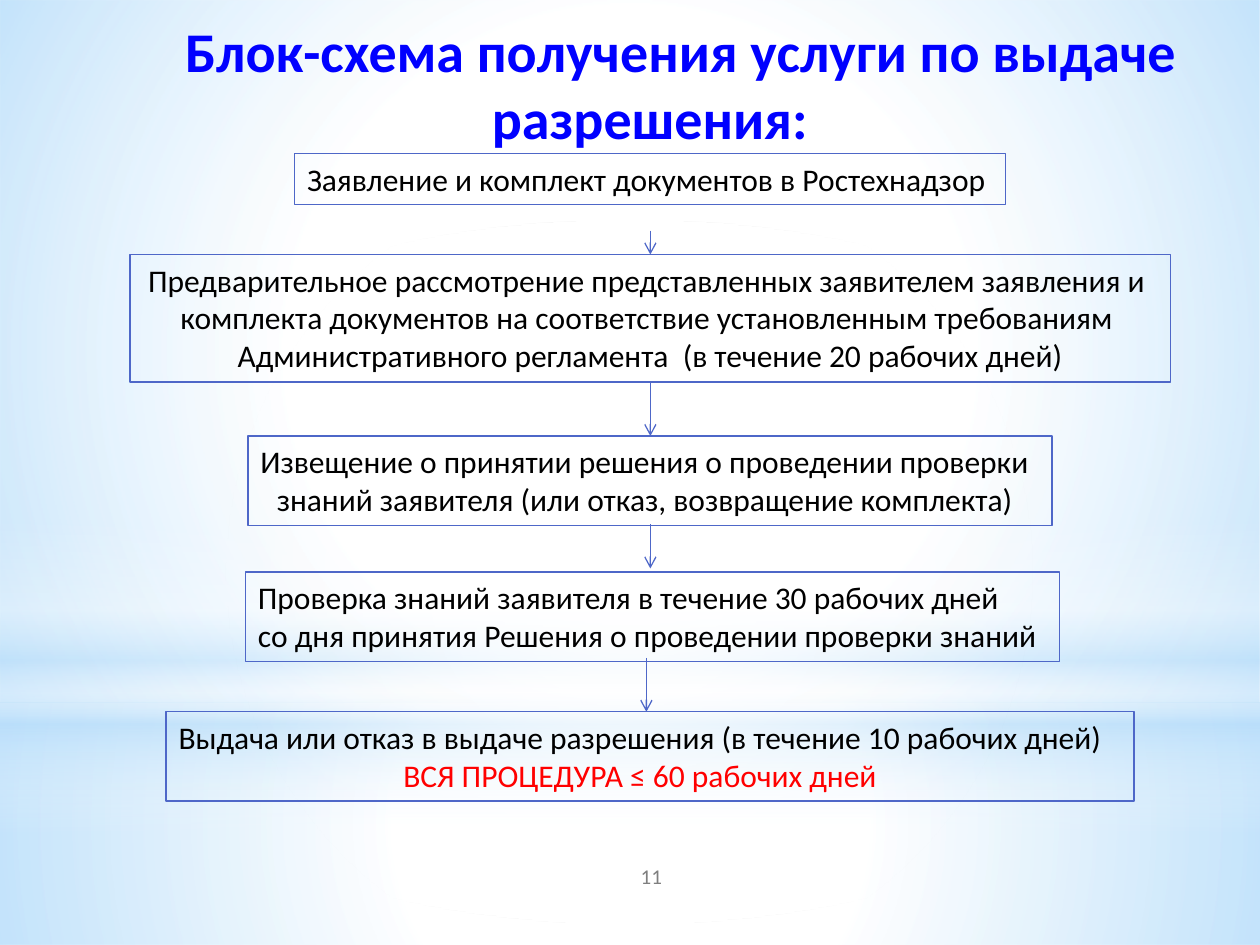
from typing import NamedTuple

from lxml.etree import SubElement
from pptx import Presentation
from pptx.dml.color import RGBColor
from pptx.enum.shapes import MSO_CONNECTOR as Connector, MSO_SHAPE as Preset
from pptx.enum.text import MSO_ANCHOR as Anchor, MSO_AUTO_SIZE as AutoSize, PP_ALIGN as Align
from pptx.oxml import parse_xml
from pptx.oxml.ns import nsdecls, qn
from pptx.util import Cm, Pt

COLORS = {
    "white": "FFFFFF",
    "sky": "B4DCFA",
    "outline": "4E67C8",
    "title": "0000FF",
    "text": "000000",
    "alert": "FF0000",
    "number": "7F7F7F",
}
FONT = "Calibri"
SLIDE_WIDTH, SLIDE_HEIGHT = 25.4, 19.05
LINE_WIDTH = Pt(0.75)
RADIAL = ('<a:path path="circle"><a:fillToRect l="50000" t="50000" '
          'r="50000" b="50000"/></a:path>')
VERTICAL = '<a:lin ang="5400000" scaled="0"/>'


class Stop(NamedTuple):
    position: int
    color: str
    opacity: int


class Glow(NamedTuple):
    """A full-width background shape with a translucent gradient."""
    top: float
    height: float
    stops: list[Stop]
    preset: Preset = Preset.RECTANGLE
    direction: str = RADIAL


class Line(NamedTuple):
    text: str
    align: Align = Align.CENTER
    color: str = "text"


class Step(NamedTuple):
    left: float
    top: float
    width: float
    height: float
    lines: list[Line]


class Arrow(NamedTuple):
    x: float
    top: float
    bottom: float


GLOWS = [
    Glow(14.17, 4.88, [Stop(0, "white", 91), Stop(37, "white", 76), Stop(100, "sky", 79)]),
    Glow(0, 14.17, [Stop(0, "white", 89), Stop(48, "white", 62), Stop(100, "sky", 79)]),
    Glow(10.46, 6.35, [Stop(0, "white", 0), Stop(29, "white", 30), Stop(45, "sky", 40),
                       Stop(55, "white", 26), Stop(65, "sky", 60), Stop(100, "white", 0)],
         direction=VERTICAL),
    Glow(4.45, 14.17, [Stop(0, "white", 100), Stop(56, "white", 0)], Preset.OVAL),
]
STEPS = [
    Step(5.94, 3.1, 14.33, 1.02, [
        Line("Заявление и комплект документов в Ростехнадзор", Align.LEFT)]),
    Step(2.62, 5.13, 20.98, 2.57, [
        Line("Предварительное рассмотрение представленных заявителем заявления и "),
        Line("комплекта документов на соответствие установленным требованиям "),
        Line("Административного регламента  (в течение 20 рабочих дней)")]),
    Step(5, 8.79, 16.21, 1.8, [
        Line("Извещение о принятии решения о проведении проверки", Align.LEFT),
        Line("знаний заявителя (или отказ, возвращение комплекта)")]),
    Step(4.95, 11.53, 16.41, 1.8, [
        Line("Проверка знаний заявителя в течение 30 рабочих дней", Align.LEFT),
        Line("со дня принятия Решения о проведении проверки знаний")]),
    Step(3.35, 14.35, 19.51, 1.8, [
        Line("Выдача или отказ в выдаче разрешения (в течение 10 рабочих дней)", Align.LEFT),
        Line("ВСЯ ПРОЦЕДУРА ≤ 60 рабочих дней", color="alert")]),
]
ARROWS = [
    Arrow(13.11, 4.65, 5.13),
    Arrow(13.11, 7.7, 8.79),
    Arrow(13.11, 10.57, 11.46),
    Arrow(13.03, 13.26, 14.35),
]


def rgb(name: str) -> RGBColor:
    return RGBColor.from_string(COLORS[name])


def write_line(para, line: Line, size: float, bold: bool = False) -> None:
    para.text = line.text
    para.alignment = line.align
    font = para.font
    font.name, font.size, font.bold = FONT, Pt(size), bold
    font.color.rgb = rgb(line.color)


def draw_glow(slide, glow: Glow) -> None:
    shape = slide.shapes.add_shape(glow.preset, 0, Cm(glow.top), Cm(SLIDE_WIDTH), Cm(glow.height))
    shape.shadow.inherit = False
    shape.line.fill.background()
    shape.fill.background()
    stops = "".join(
        f'<a:gs pos="{stop.position * 1000}"><a:srgbClr val="{COLORS[stop.color]}">'
        f'<a:alpha val="{stop.opacity * 1000}"/></a:srgbClr></a:gs>'
        for stop in glow.stops)
    gradient = parse_xml(f'<a:gradFill {nsdecls("a")} rotWithShape="1">'
                         f'<a:gsLst>{stops}</a:gsLst>{glow.direction}</a:gradFill>')
    properties = shape._element.spPr
    properties.replace(properties.find(qn("a:noFill")), gradient)


def draw_label(slide, left: float, top: float, width: float, height: float,
               line: Line, size: float, bold: bool = False, anchor: Anchor = Anchor.TOP):
    box = slide.shapes.add_textbox(Cm(left), Cm(top), Cm(width), Cm(height))
    frame = box.text_frame
    frame.word_wrap = True
    frame.vertical_anchor = anchor
    write_line(frame.paragraphs[0], line, size, bold)
    return frame.paragraphs[0]


def draw_step(slide, step: Step) -> None:
    box = slide.shapes.add_shape(Preset.RECTANGLE, Cm(step.left), Cm(step.top),
                                 Cm(step.width), Cm(step.height))
    box.shadow.inherit = False
    box.fill.background()
    box.line.color.rgb = rgb("outline")
    box.line.width = LINE_WIDTH
    frame = box.text_frame
    frame.word_wrap = False
    frame.auto_size = AutoSize.SHAPE_TO_FIT_TEXT
    frame.vertical_anchor = Anchor.TOP
    for index, line in enumerate(step.lines):
        para = frame.add_paragraph() if index else frame.paragraphs[0]
        write_line(para, line, 18)


def draw_arrow(slide, arrow: Arrow) -> None:
    connector = slide.shapes.add_connector(Connector.STRAIGHT, Cm(arrow.x), Cm(arrow.top),
                                           Cm(arrow.x), Cm(arrow.bottom))
    connector.line.color.rgb = rgb("outline")
    connector.line.width = LINE_WIDTH
    properties = connector._element.spPr
    SubElement(properties.find(qn("a:ln")), qn("a:tailEnd"), type="arrow")
    SubElement(properties, qn("a:effectLst"))


def main() -> None:
    deck = Presentation()
    deck.slide_width, deck.slide_height = Cm(SLIDE_WIDTH), Cm(SLIDE_HEIGHT)
    slide = deck.slides.add_slide(deck.slide_layouts[6])
    for glow in GLOWS:
        draw_glow(slide, glow)
    draw_label(slide, 10.59, 17.15, 5.08, 1.02, Line("11", color="number"), 12,
               anchor=Anchor.MIDDLE)
    title = draw_label(slide, 1.7, 0.2, 22.81, 3,
                       Line("Блок-схема получения услуги по выдаче разрешения:", color="title"),
                       32, bold=True)
    title._p.get_or_add_pPr().set("indent", str(Cm(1.25)))
    for step in STEPS:
        draw_step(slide, step)
    for arrow in ARROWS:
        draw_arrow(slide, arrow)
    deck.save("out.pptx")


if __name__ == "__main__":
    main()
